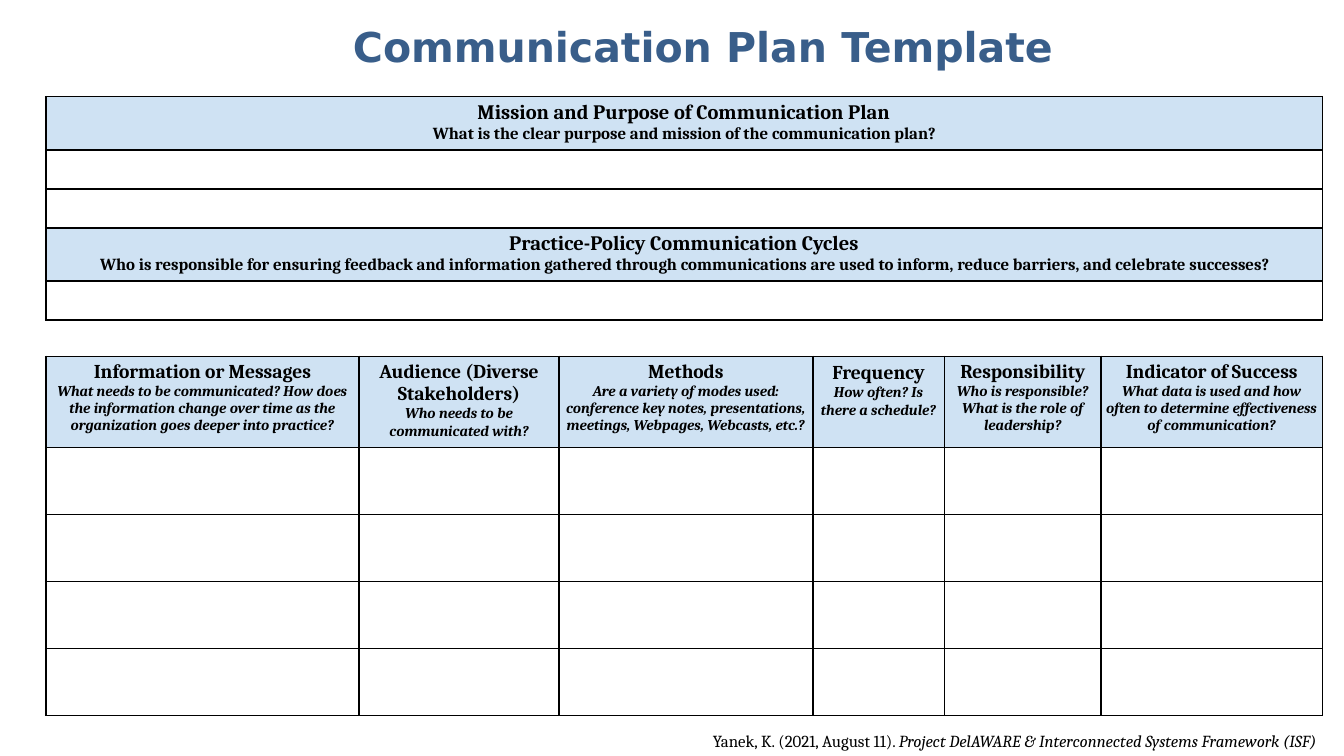
from dataclasses import dataclass

from lxml.etree import SubElement
from pptx import Presentation
from pptx.dml.color import RGBColor
from pptx.enum.text import MSO_ANCHOR, MSO_AUTO_SIZE, PP_ALIGN
from pptx.oxml.ns import qn
from pptx.util import Pt

BLACK = RGBColor(0x00, 0x00, 0x00)
TITLE_BLUE = RGBColor(0x39, 0x5E, 0x8A)
HEADER_BLUE = RGBColor(0xCF, 0xE2, 0xF3)
BODY_FONT = "Cambria"
TITLE_FONT = "DejaVu Sans"
TABLE_LEFT = 24.5
CELL_MARGIN = 2.2


@dataclass(frozen=True)
class Heading:
    title: str
    question: str
    title_size: float = 10.5
    question_size: float = 8
    italic: bool = True
    larger_ending: str = ""


@dataclass(frozen=True)
class Row:
    height: float
    headings: tuple[Heading, ...] = ()


MISSION = Heading(
    "Mission and Purpose of Communication Plan",
    "What is the clear purpose and mission of the communication plan?",
    title_size=11, question_size=9, italic=False,
)
CYCLES = Heading(
    "Practice-Policy Communication Cycles",
    "Who is responsible for ensuring feedback and information gathered through "
    "communications are used to inform, reduce barriers, and celebrate successes?",
    title_size=11, question_size=9, italic=False,
)
PLAN_HEADINGS = (
    Heading("Information or Messages",
            "What needs to be communicated? How does the information change over "
            "time as the organization goes deeper into practice?"),
    Heading("Audience (Diverse Stakeholders)", "Who needs to be communicated with?"),
    Heading("Methods",
            "Are a variety of modes used: conference key notes, presentations, "
            "meetings, Webpages, Webcasts, etc.?"),
    Heading("Frequenc", "How often? Is there a schedule?", larger_ending="y"),
    Heading("Responsibility", "Who is responsible? What is the role of leadership?"),
    Heading("Indicator of Success",
            "What data is used and how often to determine effectiveness of communication?"),
)
MISSION_ROWS = (Row(28.4, (MISSION,)), Row(20.9), Row(20.9), Row(28.4, (CYCLES,)), Row(20.9))
PLAN_ROWS = (Row(48.7, PLAN_HEADINGS), *[Row(35.9)] * 4)
PLAN_WIDTHS = (168, 107, 136, 70.5, 84, 118.5)


def add_text(para, text: str, *, size: float, font: str = BODY_FONT,
             color: RGBColor = BLACK, bold: bool = False, italic: bool = False,
             align: PP_ALIGN = PP_ALIGN.CENTER) -> None:
    para.alignment = align
    span = para.add_run()
    span.text = text
    span.font.size = Pt(size)
    span.font.name = font
    span.font.color.rgb = color
    span.font.bold = bold
    span.font.italic = italic


def add_borders(cell) -> None:
    properties = cell._tc.get_or_add_tcPr()
    for side in ("L", "R", "T", "B"):
        line = SubElement(properties, qn(f"a:ln{side}"), w=str(Pt(1)))
        fill = SubElement(line, qn("a:solidFill"))
        SubElement(fill, qn("a:srgbClr"), val=str(BLACK))


def fill_heading(cell, heading: Heading) -> None:
    cell.fill.solid()
    cell.fill.fore_color.rgb = HEADER_BLUE
    para = cell.text_frame.paragraphs[0]
    add_text(para, heading.title, size=heading.title_size, bold=True)
    if heading.larger_ending:
        add_text(para, heading.larger_ending, size=11, bold=True)
    add_text(cell.text_frame.add_paragraph(), heading.question,
             size=heading.question_size, bold=True, italic=heading.italic)


def add_grid(page, top: float, widths: tuple[float, ...], rows: tuple[Row, ...]) -> None:
    table = page.shapes.add_table(
        len(rows), len(widths), Pt(TABLE_LEFT), Pt(top),
        Pt(sum(widths)), Pt(sum(row.height for row in rows))).table
    table.first_row = False
    table.horz_banding = False
    for column, width in zip(table.columns, widths):
        column.width = Pt(width)
    for row_index, row in enumerate(rows):
        table.rows[row_index].height = Pt(row.height)
        for column_index in range(len(widths)):
            cell = table.cell(row_index, column_index)
            cell.margin_left = cell.margin_right = Pt(CELL_MARGIN)
            cell.margin_top = cell.margin_bottom = Pt(CELL_MARGIN)
            add_borders(cell)
            if row.headings:
                fill_heading(cell, row.headings[column_index])
            else:
                cell.fill.background()
                SubElement(cell.text_frame.paragraphs[0]._p, qn("a:endParaRPr"), sz="900")


def add_title(page) -> None:
    title = page.shapes.title
    title.left, title.top, title.width, title.height = Pt(135.4), Pt(9.4), Pt(482.4), Pt(61.9)
    frame = title.text_frame
    frame.auto_size = MSO_AUTO_SIZE.NONE
    frame.vertical_anchor = MSO_ANCHOR.TOP
    frame.margin_top = Pt(2)
    add_text(frame.paragraphs[0], "Communication Plan Template",
             size=22, font=TITLE_FONT, color=TITLE_BLUE, bold=True)


def add_citation(page) -> None:
    box = page.shapes.add_textbox(Pt(177.1), Pt(383.8), Pt(535), Pt(25.2))
    frame = box.text_frame
    frame.word_wrap = True
    frame.margin_left = frame.margin_right = Pt(7.2)
    frame.margin_top = frame.margin_bottom = Pt(7.2)
    para = frame.paragraphs[0]
    para.line_spacing = 1.15
    add_text(para, "Yanek, K. (2021, August 11). ", size=9, align=PP_ALIGN.RIGHT)
    add_text(para, "Project DelAWARE & Interconnected Systems Framework (ISF)",
             size=9, italic=True, align=PP_ALIGN.RIGHT)


def main() -> None:
    deck = Presentation()
    deck.slide_width, deck.slide_height = Pt(720), Pt(405)
    page = deck.slides.add_slide(deck.slide_layouts.get_by_name("Title Only"))
    add_citation(page)
    add_grid(page, 191, PLAN_WIDTHS, PLAN_ROWS)
    add_title(page)
    add_grid(page, 51.8, (sum(PLAN_WIDTHS),), MISSION_ROWS)
    deck.save("out.pptx")


if __name__ == "__main__":
    main()
